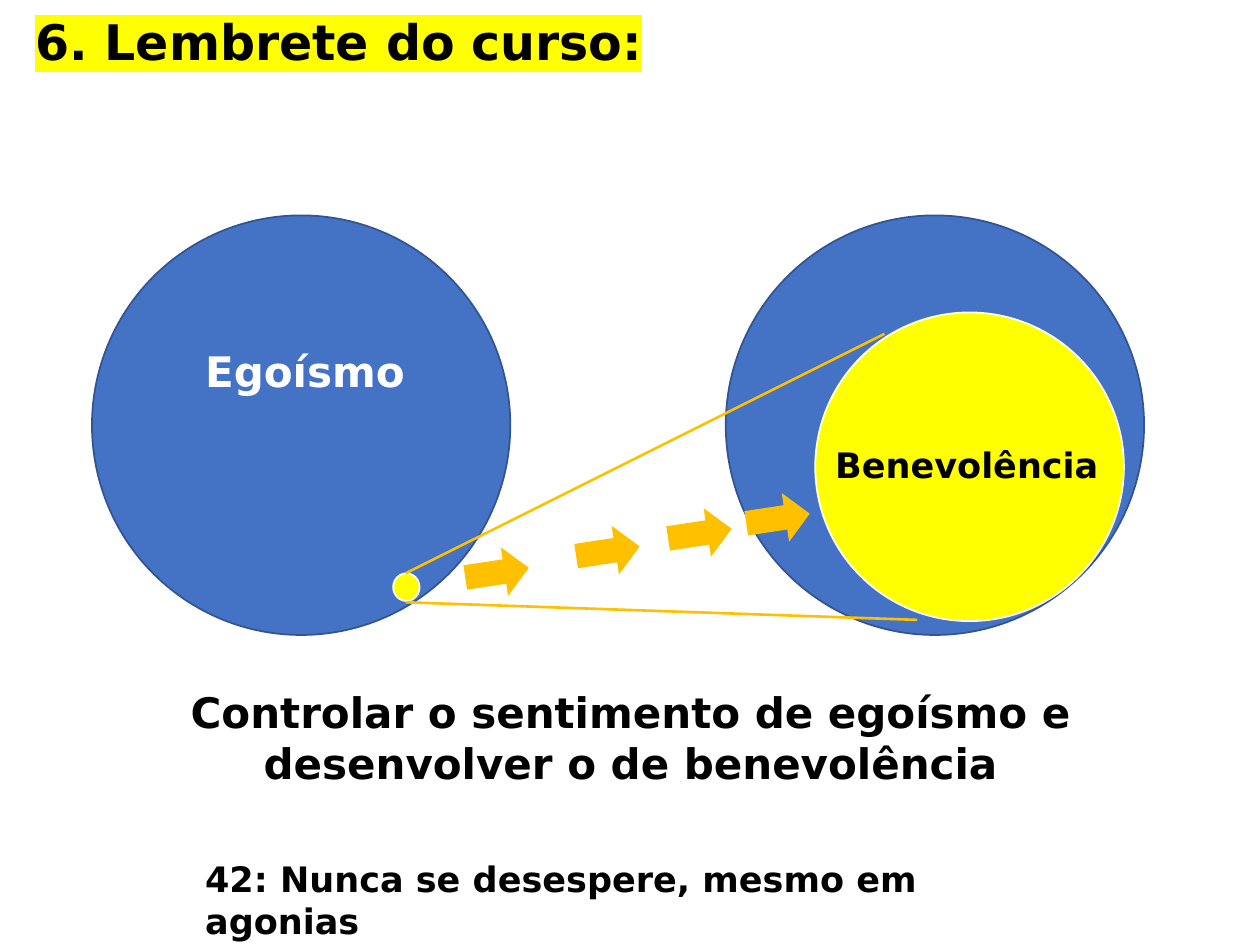
from dataclasses import dataclass

from lxml import etree
from pptx import Presentation
from pptx.dml.color import RGBColor
from pptx.enum import shapes, text
from pptx.oxml.ns import qn
from pptx.util import Inches, Pt


@dataclass(frozen=True)
class Theme:
    font: str = "DejaVu Sans"
    black: str = "000000"
    white: str = "FFFFFF"
    blue: str = "4472C4"
    navy: str = "325491"
    yellow: str = "FFFF00"
    amber: str = "FFC000"
    title: int = 28
    heading: int = 24
    label: int = 20
    outline: float = 1
    ray: float = 1.5


THEME = Theme()
ALIGN = text.PP_ALIGN


def rgb(value):
    return RGBColor.from_string(value)


def highlight(run, color):
    """Mark a run that already has its font colour."""
    marker = etree.Element(qn("a:highlight"))
    etree.SubElement(marker, qn("a:srgbClr"), val=color)
    run.font.fill._xPr.find(qn("a:solidFill")).addnext(marker)


def add_label(parent, box, wording, size, color=THEME.black, align=None, wrap=True):
    """Add bold text and return its run."""
    label = parent.add_textbox(*map(Inches, box))
    frame = label.text_frame
    frame.text = wording
    frame.word_wrap = wrap
    frame.auto_size = text.MSO_AUTO_SIZE.SHAPE_TO_FIT_TEXT
    paragraph = frame.paragraphs[0]
    paragraph.alignment = align
    run = paragraph.runs[0]
    run.font.name = THEME.font
    run.font.size = Pt(size)
    run.font.bold = True
    run.font.color.rgb = rgb(color)
    return run


def add_filled(parent, kind, box, fill, line=None):
    figure = parent.add_shape(kind, *map(Inches, box))
    figure.shadow.inherit = False
    figure.fill.solid()
    figure.fill.fore_color.rgb = rgb(fill)
    if line:
        figure.line.color.rgb = rgb(line)
        figure.line.width = Pt(THEME.outline)
    else:
        figure.line.fill.background()
    return figure


def add_circle(parent, box, fill, line):
    return add_filled(parent, shapes.MSO_SHAPE.OVAL, box, fill, line)


def add_ray(parent, start, end):
    ray = parent.add_connector(
        shapes.MSO_CONNECTOR.STRAIGHT, *map(Inches, start + end))
    ray.line.color.rgb = rgb(THEME.amber)
    ray.line.width = Pt(THEME.ray)
    etree.SubElement(ray._element.spPr, qn("a:effectLst"))


def add_arrow(parent, left, top):
    arrow = add_filled(parent, shapes.MSO_SHAPE.RIGHT_ARROW,
                       (left, top, 0.51, 0.39), THEME.amber)
    arrow.rotation = 351.4


def add_selfishness(slide):
    group = slide.shapes.add_group_shape().shapes
    add_circle(group, (0.73, 1.71, 3.32, 3.33), THEME.blue, THEME.navy)
    add_circle(group, (3.12, 4.55, 0.21, 0.22), THEME.yellow, THEME.white)
    add_label(group, (1.53, 2.69, 1.8, 0.5), "Egoísmo", THEME.heading,
              THEME.white, wrap=False)


def add_benevolence(slide):
    group = slide.shapes.add_group_shape().shapes
    add_circle(group, (5.76, 1.71, 3.32, 3.33), THEME.blue, THEME.navy)
    add_circle(group, (6.47, 2.48, 2.45, 2.45), THEME.yellow, THEME.white)
    add_ray(group, (3.22, 4.78), (7.28, 4.92))
    add_label(group, (6.53, 3.47, 2.29, 0.44), "Benevolência", THEME.label,
              wrap=False)
    for left, top in ((3.69, 4.35), (4.57, 4.18), (5.3, 4.04), (5.92, 3.92)):
        add_arrow(group, left, top)
    add_ray(group, (3.22, 4.55), (7.02, 2.65))


def main():
    deck = Presentation()
    deck.slide_width, deck.slide_height = Inches(10), Inches(7.5)
    slide = deck.slides.add_slide(deck.slide_layouts[6])

    title = add_label(slide.shapes, (0.18, 0.04, 9.39, 0.57),
                      "6. Lembrete do curso:", THEME.title, align=ALIGN.JUSTIFY)
    highlight(title, THEME.yellow)
    add_selfishness(slide)
    add_benevolence(slide)
    add_label(slide.shapes, (0.31, 5.4, 9.39, 0.91),
              "Controlar o sentimento de egoísmo e desenvolver o de benevolência",
              THEME.heading, align=ALIGN.CENTER)
    add_label(slide.shapes, (1.53, 6.76, 7.16, 0.44),
              "42: Nunca se desespere, mesmo em agonias", THEME.label)

    deck.save("out.pptx")


if __name__ == "__main__":
    main()
